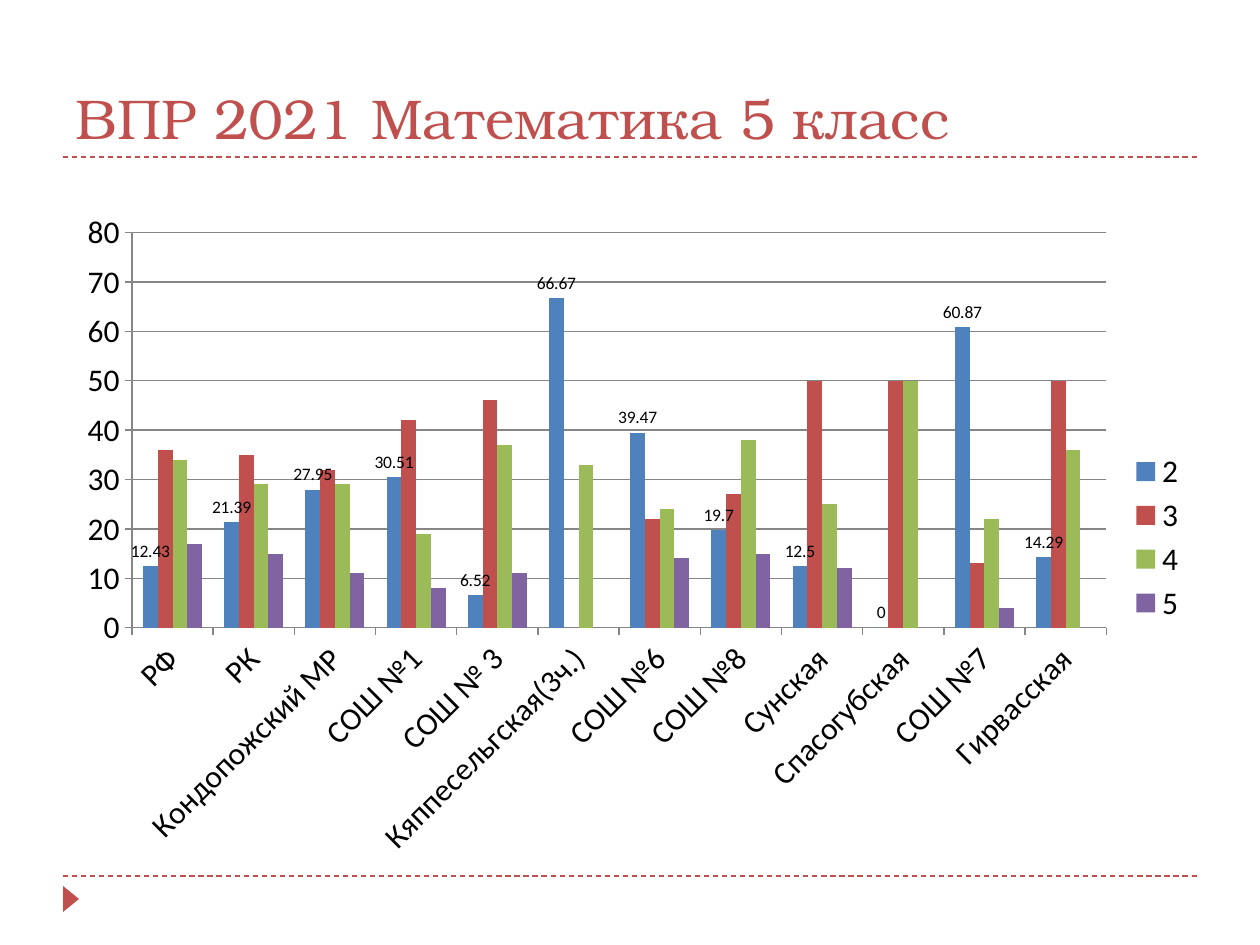
from lxml import etree
from pptx import Presentation
from pptx.chart.data import CategoryChartData
from pptx.dml.color import RGBColor
from pptx.enum.chart import XL_CHART_TYPE as CHART, XL_LABEL_POSITION as LABEL
from pptx.enum.chart import XL_LEGEND_POSITION as LEGEND, XL_TICK_MARK as TICK
from pptx.enum.dml import MSO_LINE
from pptx.enum.shapes import MSO_CONNECTOR, MSO_SHAPE
from pptx.enum.text import MSO_ANCHOR, PP_ALIGN
from pptx.oxml import parse_xml
from pptx.oxml.ns import nsdecls, qn
from pptx.util import Pt

RED = RGBColor(0xC0, 0x50, 0x4D)
BLUE = RGBColor(0x4F, 0x81, 0xBD)
GREEN = RGBColor(0x9B, 0xBB, 0x59)
PURPLE = RGBColor(0x80, 0x64, 0xA2)
GRAY = RGBColor(0x86, 0x86, 0x86)
BLACK = RGBColor(0, 0, 0)

SCHOOLS = ["РФ", "РК", "Кондопожский МР", "СОШ №1", "СОШ № 3", "Кяппесельгская(3ч.)",
           "СОШ №6", "СОШ №8", "Сунская", "Спасогубская", "СОШ №7", "Гирвасская"]
GRADES = [
    ("2", BLUE, [12.43, 21.39, 27.95, 30.51, 6.52, 66.67, 39.47, 19.7, 12.5, 0, 60.87, 14.29]),
    ("3", RED, [36, 35, 32, 42, 46, 0, 22, 27, 50, 50, 13, 50]),
    ("4", GREEN, [34, 29, 29, 19, 37, 33, 24, 38, 25, 50, 22, 36]),
    ("5", PURPLE, [17, 15, 11, 8, 11, 0, 14, 15, 12, 0, 4, 0]),
]


def px(*lengths):
    """Turn pixels (126 to the inch) into EMU."""
    return [round(n * 914400 / 126) for n in lengths]


def set_layout(element, index, target, x, y, w, h):
    """Place a chart part by fractions of the chart area."""
    for old in element.findall(qn("c:layout")):
        element.remove(old)
    element.insert(index, parse_xml(
        f'<c:layout {nsdecls("c")}><c:manualLayout>{target}'
        '<c:xMode val="edge"/><c:yMode val="edge"/>'
        f'<c:x val="{x}"/><c:y val="{y}"/><c:w val="{w}"/><c:h val="{h}"/>'
        '</c:manualLayout></c:layout>'))


prs = Presentation()
prs.slide_width, prs.slide_height = px(1260, 945)
slide = prs.slides.add_slide(prs.slide_layouts[5])
shapes = slide.shapes

# Dashed rules and corner marker
for y in (876, 157):
    rule = shapes.add_connector(MSO_CONNECTOR.STRAIGHT, *px(63, y, 1197, y))
    rule.line.color.rgb = RED
    rule.line.width = Pt(0.75)
    rule.line.dash_style = MSO_LINE.DASH
    etree.SubElement(rule._element.spPr, qn("a:effectLst"))

marker = shapes.add_shape(MSO_SHAPE.ISOSCELES_TRIANGLE, *px(58, 891, 26, 16))
marker.rotation = 90
marker.shadow.inherit = False
marker.fill.solid()
marker.fill.fore_color.rgb = RED
marker.line.fill.background()

# Title
title = shapes.title
title.left, title.top, title.width, title.height = px(63, 21, 1134, 136)
tf = title.text_frame
tf.text = "ВПР 2021 Математика 5 класс"
tf.vertical_anchor = MSO_ANCHOR.BOTTOM
p = tf.paragraphs[0]
p.alignment = PP_ALIGN.LEFT
font = p.runs[0].font
font.name, font.size, font.color.rgb = "TeX Gyre Bonum", Pt(32), RED

# Chart
data = CategoryChartData()
data.categories = SCHOOLS
for name, color, values in GRADES:
    data.add_series(name, values)
chart = shapes.add_chart(CHART.COLUMN_CLUSTERED, *px(64, 199, 1133, 670), data).chart
chart.has_title = False
chart.font.name, chart.font.size, chart.font.color.rgb = "Calibri", Pt(18), BLACK

plot = chart.plots[0]
plot.gap_width = 150
plot.overlap = 0
plot.vary_by_categories = False
for series, (name, color, values) in zip(plot.series, GRADES):
    series.format.fill.solid()
    series.format.fill.fore_color.rgb = color

labels = plot.series[0].data_labels
labels.show_value = True
labels.position = LABEL.OUTSIDE_END
labels.font.name, labels.font.size, labels.font.color.rgb = "Calibri", Pt(10), BLACK

for axis in (chart.category_axis, chart.value_axis):
    axis.major_tick_mark = TICK.OUTSIDE
    axis.minor_tick_mark = TICK.NONE
    axis.format.line.color.rgb = GRAY
    axis.tick_labels.font.size = Pt(18)
chart.category_axis._element.txPr.bodyPr.set("rot", "-2700000")
scale = chart.value_axis
scale.minimum_scale, scale.maximum_scale, scale.major_unit = 0, 80, 10
scale.has_major_gridlines = True
scale.major_gridlines.format.line.color.rgb = GRAY

chart.has_legend = True
legend = chart.legend
legend.position = LEGEND.RIGHT
legend.include_in_layout = False
legend.font.size = Pt(18)

plot_area = chart._chartSpace.chart.plotArea
set_layout(plot_area, 0, '<c:layoutTarget val="inner"/>', 0.06, 0.05, 0.86, 0.59)
set_layout(legend._element, 1, "", 0.94, 0.37, 0.05, 0.27)

prs.save("out.pptx")
